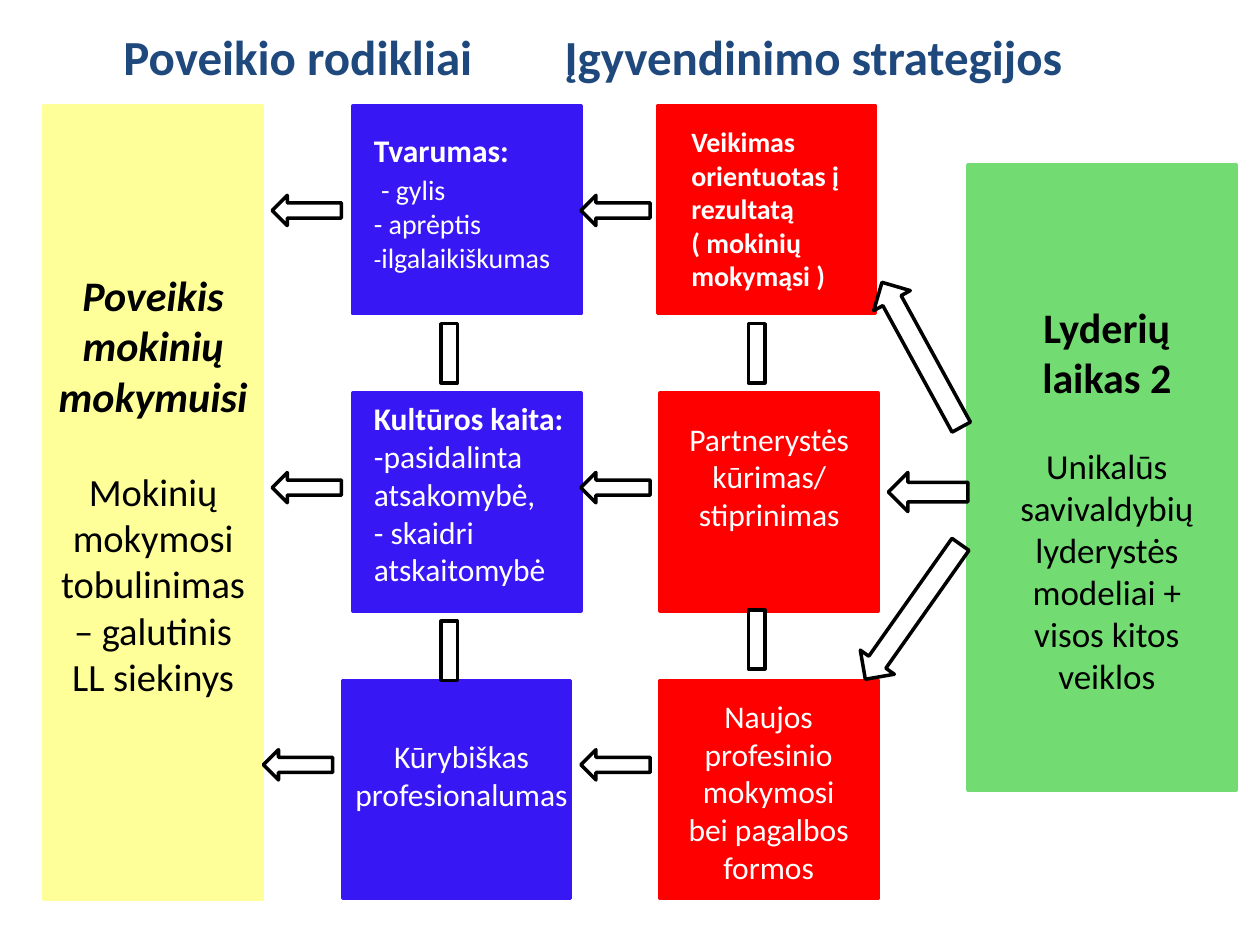
"""Build a slide that links leadership strategies to indicators of impact."""
from dataclasses import dataclass

from pptx import Presentation
from pptx.dml.color import RGBColor
from pptx.enum.shapes import MSO_SHAPE
from pptx.enum.text import MSO_ANCHOR, MSO_AUTO_SIZE, PP_ALIGN
from pptx.util import Pt

RECTANGLE = MSO_SHAPE.RECTANGLE
ARROW = MSO_SHAPE.RIGHT_ARROW
LEFT, CENTER = PP_ALIGN.LEFT, PP_ALIGN.CENTER
TOP = MSO_ANCHOR.TOP
FIXED = MSO_AUTO_SIZE.NONE

FONT = "Calibri"
BLACK, WHITE, NAVY = "000000", "FFFFFF", "1F497D"
YELLOW, BLUE, RED, GREEN = "FFFF99", "3718F4", "FF0000", "72DC72"


@dataclass(frozen=True)
class Area:
    left: float
    top: float
    width: float
    height: float


@dataclass(frozen=True)
class Block:
    area: Area
    fill: str
    line: str
    kind: MSO_SHAPE = RECTANGLE
    rotation: float = 0


@dataclass(frozen=True)
class Span:
    text: str
    size: float
    bold: bool = False
    italic: bool = False


@dataclass(frozen=True)
class Para:
    spans: tuple[Span, ...]
    before: float = 0


@dataclass(frozen=True)
class Label:
    area: Area
    paras: tuple[Para, ...]
    color: str = WHITE
    align: PP_ALIGN = CENTER


def rgb(color: str) -> RGBColor:
    """Turn a hex string into a colour."""
    return RGBColor.from_string(color)


def place(box, area: Area) -> None:
    """Move and size a box."""
    box.left, box.top = Pt(area.left), Pt(area.top)
    box.width, box.height = Pt(area.width), Pt(area.height)


def one(text: str, size: float, bold: bool = False, italic: bool = False, before: float = 0) -> Para:
    """Make a paragraph in a single format."""
    return Para((Span(text, size, bold, italic),), before)


def draw_block(page, block: Block) -> None:
    """Draw a filled and outlined shape."""
    area = block.area
    shape = page.shapes.add_shape(
        block.kind, Pt(area.left), Pt(area.top), Pt(area.width), Pt(area.height))
    shape.shadow.inherit = False
    shape.rotation = block.rotation
    shape.fill.solid()
    shape.fill.fore_color.rgb = rgb(block.fill)
    shape.line.color.rgb = rgb(block.line)
    shape.line.width = Pt(2)


def write_span(paragraph, span: Span) -> None:
    """Add a span, with a line break at each newline."""
    for index, line in enumerate(span.text.split("\n")):
        if index:
            paragraph.add_line_break()
        if line:
            run = paragraph.add_run()
            run.text = line
            run.font.size = Pt(span.size)
            run.font.bold = span.bold
            run.font.italic = span.italic


def write_label(box, label: Label) -> None:
    """Place a box and fill it with formatted paragraphs."""
    place(box, label.area)
    frame = box.text_frame
    frame.word_wrap = True
    frame.auto_size = FIXED
    frame.vertical_anchor = TOP
    for index, para in enumerate(label.paras):
        paragraph = frame.add_paragraph() if index else frame.paragraphs[0]
        paragraph.alignment = label.align
        paragraph.space_before = Pt(para.before)
        paragraph.font.name = FONT
        paragraph.font.color.rgb = rgb(label.color)
        paragraph.font.size = Pt(para.spans[0].size)
        for span in para.spans:
            write_span(paragraph, span)


TITLE = Label(Area(48.2, 11.5, 244, 41), (one("Poveikio rodikliai", 28, True),), NAVY)

LABELS = (
    Label(Area(308.9, 11.5, 311.8, 41), (one("Įgyvendinimo strategijos", 28, True),), NAVY),
    Label(Area(25.2, 150.5, 124.6, 278.6), (
        one("Poveikis mokinių mokymuisi", 24, True, True),
        one("Mokinių mokymosi tobulinimas – galutinis LL siekinys", 22, before=27)), BLACK),
    Label(Area(206.6, 71.3, 136, 90), (
        Para((Span("Tvarumas:\n ", 18, True), Span("- gylis", 16))),
        Para((Span("- aprėptis\n", 16), Span("-", 14), Span("ilgalaikiškumas", 16)))),
        align=LEFT),
    Label(Area(206.6, 224.6, 124.6, 116.6), (
        Para((Span("Kultūros kaita: ", 18, True),
              Span("-pasidalinta atsakomybė,\n- skaidri atskaitomybė", 18))),), align=LEFT),
    Label(Area(195.8, 417.6, 136, 51), (one("Kūrybiškas profesionalumas", 18),)),
    Label(Area(388, 67.7, 108, 104.4), (
        one("Veikimas orientuotas į\nrezultatą", 16, True),
        one("( mokinių mokymąsi )", 16, True)), align=LEFT),
    Label(Area(377.3, 236.2, 124.6, 72.7), (one("Partnerystės kūrimas/\nstiprinimas", 18),)),
    Label(Area(382.3, 394.6, 113.8, 116.6),
          (one("Naujos profesinio mokymosi bei pagalbos formos", 18),)),
    Label(Area(558.7, 168.5, 147.6, 235.4), (
        one("Lyderių laikas 2", 24, True),
        one("Unikalūs savivaldybių lyderystės modeliai +\nvisos kitos veiklos", 20,
            before=24.5)), BLACK),
)

ROWS = ((60.5, 118.8), (224.6, 124.6), (388.8, 124.6))
COLUMNS = ((BLUE, 130.3, (201.6, 201.6, 195.8)), (RED, 124.6, (375.8, 377.3, 377.3)))
PANELS = [Block(Area(25.2, 60.5, 124.6, 453.6), YELLOW, YELLOW),
          Block(Area(553, 94.3, 153.4, 357.1), GREEN, GREEN)]
PANELS += [Block(Area(left, top, width, height), color, color)
           for color, width, lefts in COLUMNS
           for left, (top, height) in zip(lefts, ROWS)]

ARROW_LEFTS = ((155.5, 155.5, 150.5), (331.9, 331.9, 331.9))
LINKS = [Block(Area(left, 111.6 + 158.4 * row, 39.6, 17.3), WHITE, BLACK, ARROW, 180)
         for lefts in ARROW_LEFTS for row, left in enumerate(lefts)]
LINKS += [Block(Area(479.5, 190.8, 94.3, 23.8), WHITE, BLACK, ARROW, 241.3),
          Block(Area(474.5, 337.7, 94.3, 23.8), WHITE, BLACK, ARROW, 125.2),
          Block(Area(507.6, 270, 45.4, 22.3), WHITE, BLACK, ARROW, 180)]
LINKS += [Block(Area(left, top, 9.4, 33.8), WHITE, BLACK)
          for left, top in ((427.7, 185), (427.7, 348.5), (252, 185), (252, 355))]


def main() -> None:
    """Build and save the deck."""
    deck = Presentation()
    deck.slide_width, deck.slide_height = Pt(720), Pt(540)
    page = deck.slides.add_slide(deck.slide_layouts[5])
    write_label(page.shapes.title, TITLE)
    for panel in PANELS:
        draw_block(page, panel)
    for label in LABELS:
        write_label(page.shapes.add_textbox(0, 0, 0, 0), label)
    for link in LINKS:
        draw_block(page, link)
    deck.save("out.pptx")


if __name__ == "__main__":
    main()
